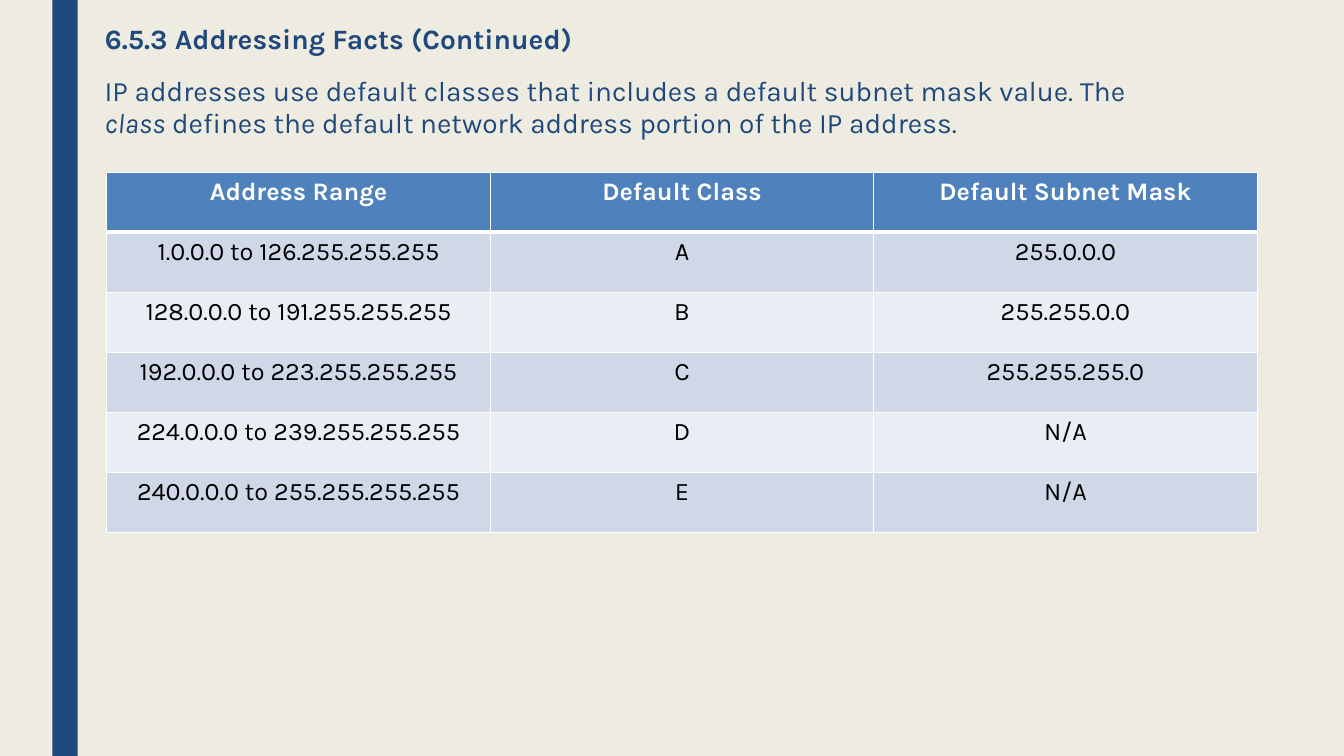
from dataclasses import dataclass

from lxml import etree
from pptx import Presentation
from pptx.dml.color import RGBColor
from pptx.enum.shapes import MSO_SHAPE
from pptx.enum.text import MSO_ANCHOR, PP_ALIGN
from pptx.oxml.ns import qn
from pptx.util import Inches, Pt

RECT = MSO_SHAPE.RECTANGLE
TOP = MSO_ANCHOR.TOP
LEFT, CENTER = PP_ALIGN.LEFT, PP_ALIGN.CENTER
TITLE_ONLY = 5


@dataclass(frozen=True)
class Theme:
    font: str = "Karla"
    background: str = "EEECE1"
    navy: str = "1F497D"
    header: str = "4F81BD"
    bands: tuple = ("D0D8E8", "E9EDF4")
    white: str = "FFFFFF"
    black: str = "000000"
    text_size: int = 20
    table_size: int = 18
    thin: int = 1
    thick: int = 3


def paint(fill, color):
    fill.solid()
    fill.fore_color.rgb = RGBColor.from_string(color)


def write(p, text, *, font, size, color, bold=False, italic=False, align=LEFT):
    p.alignment = align
    r = p.add_run()
    r.text = text
    r.font.name = font
    r.font.size = Pt(size)
    r.font.bold = bold
    r.font.italic = italic
    r.font.color.rgb = RGBColor.from_string(color)


def set_border(cell, side, color, width):
    ln = etree.SubElement(cell._tc.get_or_add_tcPr(), qn("a:" + side), w=str(Pt(width)))
    fill = etree.SubElement(ln, qn("a:solidFill"))
    etree.SubElement(fill, qn("a:srgbClr"), val=color)


class SlideBuilder:
    def __init__(self, prs, theme):
        self.theme = theme
        self.s = prs.slides.add_slide(prs.slide_layouts[TITLE_ONLY])
        paint(self.s.background.fill, theme.background)

    def bar(self, left, top, width, height):
        sp = self.s.shapes.add_shape(RECT, Inches(left), Inches(top), Inches(width), Inches(height))
        sp.shadow.inherit = False
        paint(sp.fill, self.theme.navy)
        sp.line.fill.background()

    def frame(self, sp, line_spacing):
        tf = sp.text_frame
        tf.word_wrap = True
        tf.vertical_anchor = TOP
        p = tf.paragraphs[0]
        p.line_spacing = line_spacing
        return p

    def title(self, text, left, top, width, height):
        sp = self.s.shapes.title
        sp.left, sp.top = Inches(left), Inches(top)
        sp.width, sp.height = Inches(width), Inches(height)
        t = self.theme
        write(self.frame(sp, 0.89), text, font=t.font, size=t.text_size, color=t.navy, bold=True)

    def body(self, parts, left, top, width, height):
        sp = self.s.shapes.add_textbox(Inches(left), Inches(top), Inches(width), Inches(height))
        p = self.frame(sp, 0.94)
        p.space_before, p.space_after = Pt(10), Pt(2)
        t = self.theme
        for text, italic in parts:
            write(p, text, font=t.font, size=t.text_size, color=t.navy, italic=italic)

    def table(self, rows, left, top, width, height):
        t = self.theme
        table = self.s.shapes.add_table(
            len(rows), len(rows[0]), Inches(left), Inches(top), Inches(width), Inches(height)
        ).table
        for i, row in enumerate(rows):
            is_header = i == 0
            fill = t.header if is_header else t.bands[(i - 1) % 2]
            color = t.white if is_header else t.black
            top_width = t.thick if i == 1 else t.thin
            bottom_width = t.thick if is_header else t.thin
            for j, text in enumerate(row):
                cell = table.cell(i, j)
                for side, line in zip(
                    ("lnL", "lnR", "lnT", "lnB"), (t.thin, t.thin, top_width, bottom_width)
                ):
                    set_border(cell, side, t.white, line)
                paint(cell.fill, fill)
                write(cell.text_frame.paragraphs[0], text, font=t.font, size=t.table_size,
                      color=color, bold=is_header, align=CENTER)


ADDRESS_CLASSES = [
    ("Address Range", "Default Class", "Default Subnet Mask"),
    ("1.0.0.0 to 126.255.255.255", "A", "255.0.0.0"),
    ("128.0.0.0 to 191.255.255.255", "B", "255.255.0.0"),
    ("192.0.0.0 to 223.255.255.255", "C", "255.255.255.0"),
    ("224.0.0.0 to 239.255.255.255", "D", "N/A"),
    ("240.0.0.0 to 255.255.255.255", "E", "N/A"),
]

INTRO = [
    ("IP addresses use default classes that includes a default subnet mask value. The ", False),
    ("class", True),
    (" defines the default network address portion of the IP address.", False),
]


def main():
    prs = Presentation()
    prs.slide_width, prs.slide_height = Inches(13.33), Inches(7.5)
    slide = SlideBuilder(prs, Theme())
    slide.bar(0.52, 0, 0.25, 7.5)
    slide.title("6.5.3 Addressing Facts (Continued)", 0.94, 0.2, 10.5, 1.62)
    slide.body(INTRO, 0.94, 0.71, 10.5, 1)
    slide.table(ADDRESS_CLASSES, 1.06, 1.71, 11.41, 3.57)
    prs.save("out.pptx")


if __name__ == "__main__":
    main()
